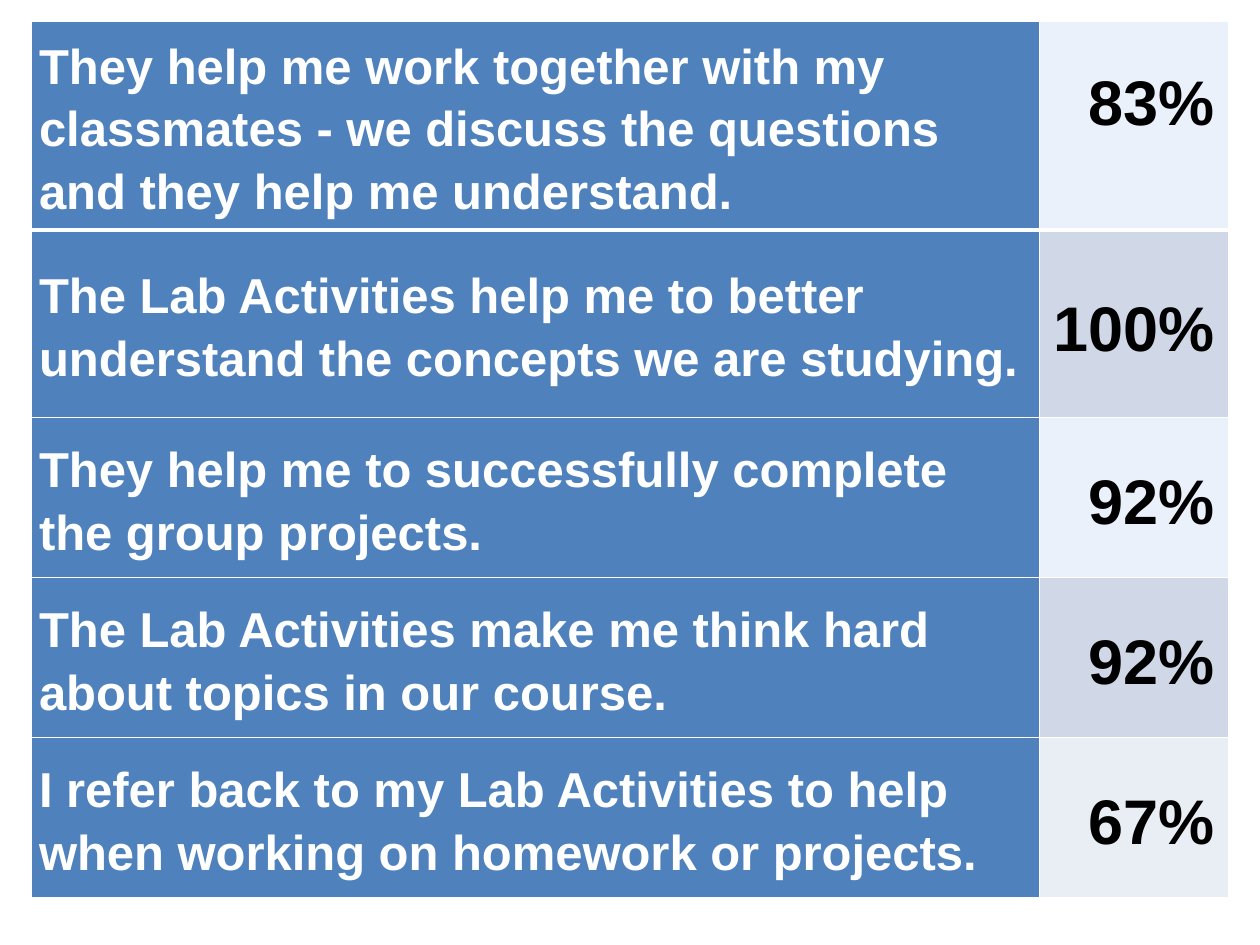
from dataclasses import dataclass

from lxml.etree import SubElement
from pptx import Presentation
from pptx.dml.color import RGBColor
from pptx.enum.text import MSO_ANCHOR, PP_ALIGN
from pptx.oxml.ns import qn
from pptx.util import Inches, Pt


@dataclass(frozen=True)
class Theme:
    font: str = "Arial"
    white: str = "FFFFFF"
    black: str = "000000"
    blue: str = "4F81BD"
    light: str = "EAF1FA"
    mid: str = "D0D8E8"
    pale: str = "E9EDF4"
    label: int = 28
    score: int = 36


THEME = Theme()
COLS = (8, 1.5)
ROWS = (
    ("They help me work together with my classmates - we discuss the questions "
     "and they help me understand.", "83%", 1.6, THEME.light),
    ("The Lab Activities help me to better understand the concepts we are studying.",
     "100%", 1.49, THEME.mid),
    ("They help me to successfully complete the group projects.",
     "92%", 1.27, THEME.light),
    ("The Lab Activities make me think hard about topics in our course.",
     "92%", 1.27, THEME.mid),
    ("I refer back to my Lab Activities to help when working on homework or projects.",
     "67%", 1.27, THEME.pale),
)


def put_text(frame, text, size, color, align=PP_ALIGN.LEFT, after=10):
    para = frame.paragraphs[0]
    para.alignment = align
    para.line_spacing = 1.15
    para.space_after = Pt(after)
    run = para.add_run()
    run.text = text
    font = run.font
    font.name, font.size, font.bold = THEME.font, Pt(size), True
    font.color.rgb = RGBColor.from_string(color)


def set_edges(cell, top, bottom):
    props = cell._tc.get_or_add_tcPr()
    widths = {"a:lnL": 1, "a:lnR": 1, "a:lnT": top, "a:lnB": bottom}
    for tag, width in widths.items():
        line = SubElement(props, qn(tag), w=str(Pt(width)))
        fill = SubElement(line, qn("a:solidFill"))
        SubElement(fill, qn("a:srgbClr"), val=THEME.white)


def style_cell(cell, color, top, bottom):
    set_edges(cell, top, bottom)
    cell.fill.solid()
    cell.fill.fore_color.rgb = RGBColor.from_string(color)
    cell.vertical_anchor = MSO_ANCHOR.MIDDLE
    cell.margin_left, cell.margin_right = Inches(0.06), Inches(0.11)
    cell.margin_top = cell.margin_bottom = Inches(0.08)


def add_survey(slide, left, top, width, height):
    frame = slide.shapes.add_table(len(ROWS), len(COLS), left, top, width, height)
    table = frame.table
    for col, share in zip(table.columns, COLS):
        col.width = int(width * share / sum(COLS))
    for row, (label, score, tall, tint) in enumerate(ROWS):
        table.rows[row].height = Inches(tall)
        name, value = table.cell(row, 0), table.cell(row, 1)
        above, below = (3 if row == 1 else 1), (3 if row == 0 else 1)
        style_cell(name, THEME.blue, above, below)
        style_cell(value, tint, above, below)
        put_text(name.text_frame, label, THEME.label, THEME.white)
        put_text(value.text_frame, score, THEME.score, THEME.black,
                 align=PP_ALIGN.RIGHT, after=10 if row else 0)
    first = table.cell(0, 1)
    first.vertical_anchor = MSO_ANCHOR.BOTTOM
    first.margin_bottom = Inches(0.72)


def main():
    deck = Presentation()
    deck.slide_width, deck.slide_height = Inches(10), Inches(7.5)
    slide = deck.slides.add_slide(deck.slide_layouts[6])
    tall = sum(row[2] for row in ROWS)
    add_survey(slide, Inches(0.25), Inches(0.17), Inches(sum(COLS)), Inches(tall))
    deck.save("out.pptx")


if __name__ == "__main__":
    main()
